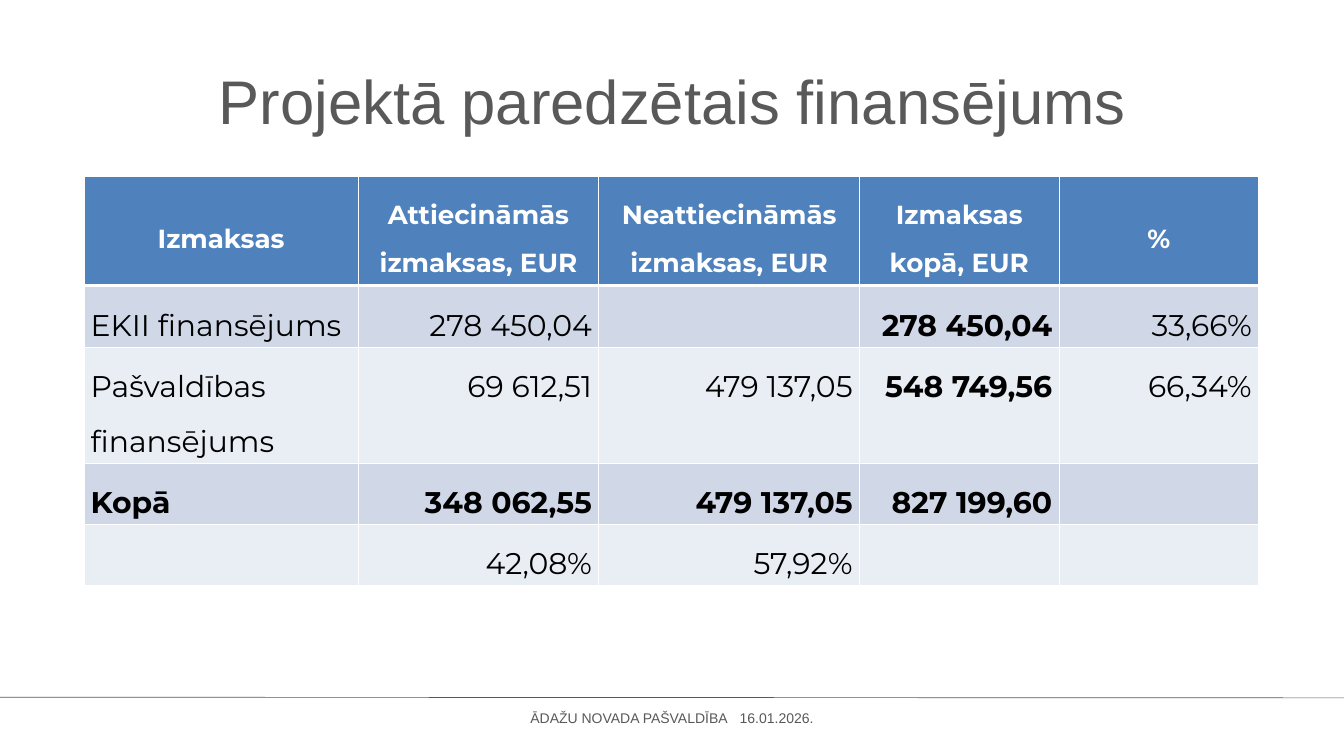
from pptx import Presentation
from pptx.dml.color import RGBColor
from pptx.enum.text import MSO_ANCHOR, MSO_AUTO_SIZE, PP_ALIGN
from pptx.oxml import parse_xml
from pptx.oxml.ns import nsdecls
from pptx.util import Inches, Pt

THEME = {
    "grey": RGBColor.from_string("595959"),
    "head": RGBColor.from_string("4F81BD"),
    "bands": [RGBColor.from_string(c) for c in ("D0D8E8", "E9EDF4")],
    "black": RGBColor.from_string("000000"),
    "white": RGBColor.from_string("FFFFFF"),
    "sans": "Arial", "cell": "Montserrat",
    "title": Pt(66), "label": Pt(28), "body": Pt(32), "foot": Pt(15),
}


def style(font, color, **fmt):
    font.color.rgb = color
    for key, value in fmt.items():
        setattr(font, key, value)


def edge(cell, side, width):
    """Draw one white border of a cell, width in points."""
    cell._tc.get_or_add_tcPr().append(parse_xml(
        f'<a:ln{side} {nsdecls("a")} w="{Pt(width)}"><a:solidFill>'
        f'<a:srgbClr val="{THEME["white"]}"/></a:solidFill></a:ln{side}>'))


deck = Presentation()
deck.slide_width, deck.slide_height = Inches(20), Inches(11.25)
slide = deck.slides.add_slide(deck.slide_layouts[5])
shapes = slide.shapes

# Footer rule
pen = shapes.build_freeform(Inches(-0.01), Inches(10.37))
pen.add_line_segments([(Inches(x), Inches(y)) for x, y in
                       ((20.01, 10.38), (20.01, 10.39), (-0.01, 10.38))])
rule = pen.convert_to_shape()
rule.shadow.inherit = False
rule.fill.solid()
rule.fill.fore_color.rgb = THEME["grey"]
rule.line.fill.background()

# Title and footer text
title = shapes.title
foot = shapes.add_textbox(0, 0, 0, 0)
lines = [
    (title, (0.47, 1.04, 19.07, 1), 71.3, "title",
     ["Projektā paredzētais finansējums"]),
    (foot, (0.1, 10.56, 19.8, 0.25), 18, "foot",
     ["ĀDAŽU NOVADA PAŠVALDĪBA", " ", "16.01.2026."]),
]
frame = {"margin_left": 0, "margin_top": 0, "margin_right": 0,
         "margin_bottom": 0, "word_wrap": True,
         "auto_size": MSO_AUTO_SIZE.NONE, "vertical_anchor": MSO_ANCHOR.TOP}
for box, place, pitch, size, parts in lines:
    box.left, box.top, box.width, box.height = map(Inches, place)
    for key, value in frame.items():
        setattr(box.text_frame, key, value)
    par = box.text_frame.paragraphs[0]
    par.alignment, par.line_spacing = PP_ALIGN.CENTER, Pt(pitch)
    for part in parts:
        run = par.add_run()
        run.text = part
        style(run.font, THEME["grey"], name=THEME["sans"], size=THEME[size])
        if part == " ":
            run.font._element.set("spc", "830")  # widens the gap before the date

# Cost table
rows = [
    ["Izmaksas", "Attiecināmās izmaksas, EUR", "Neattiecināmās izmaksas, EUR",
     "Izmaksas kopā, EUR", "%"],
    ["EKII finansējums", "278 450,04", "", "278 450,04", "33,66%"],
    ["Pašvaldības finansējums", "69 612,51", "479 137,05", "548 749,56", "66,34%"],
    ["Kopā", "348 062,55", "479 137,05", "827 199,60", ""],
    ["", "42,08%", "57,92%", "", ""],
]
widths = [4.08, 3.58, 3.88, 2.97, 2.97]
heights = [1.63] + [0.78] * 4
TOTAL_ROW, TOTAL_COL = 3, 3
table = shapes.add_table(len(rows), len(widths), Inches(1.25), Inches(2.62),
                         Inches(sum(widths)), Inches(sum(heights))).table
table.first_row = table.horz_banding = False
for col, width in zip(table.columns, widths):
    col.width = Inches(width)
for row, height in zip(table.rows, heights):
    row.height = Inches(height)

for r, row in enumerate(rows):
    head = r == 0
    for c, text in enumerate(row):
        cell = table.cell(r, c)
        for side in "LRTB":
            thick = (r, side) in ((0, "B"), (1, "T"))
            edge(cell, side, 3 if thick else 1)
        cell.fill.solid()
        cell.fill.fore_color.rgb = THEME["head"] if head else THEME["bands"][(r - 1) % 2]
        if not text:
            continue
        cell.vertical_anchor = MSO_ANCHOR.MIDDLE if head else MSO_ANCHOR.TOP
        par = cell.text_frame.paragraphs[0]
        par.line_spacing = 1.5
        par.alignment = (PP_ALIGN.CENTER if head else
                         PP_ALIGN.RIGHT if c else PP_ALIGN.LEFT)
        run = par.add_run()
        run.text = text
        style(run.font, THEME["white" if head else "black"], name=THEME["cell"],
              size=THEME["label" if head else "body"],
              bold=head or r == TOTAL_ROW or c == TOTAL_COL)

deck.save("out.pptx")
